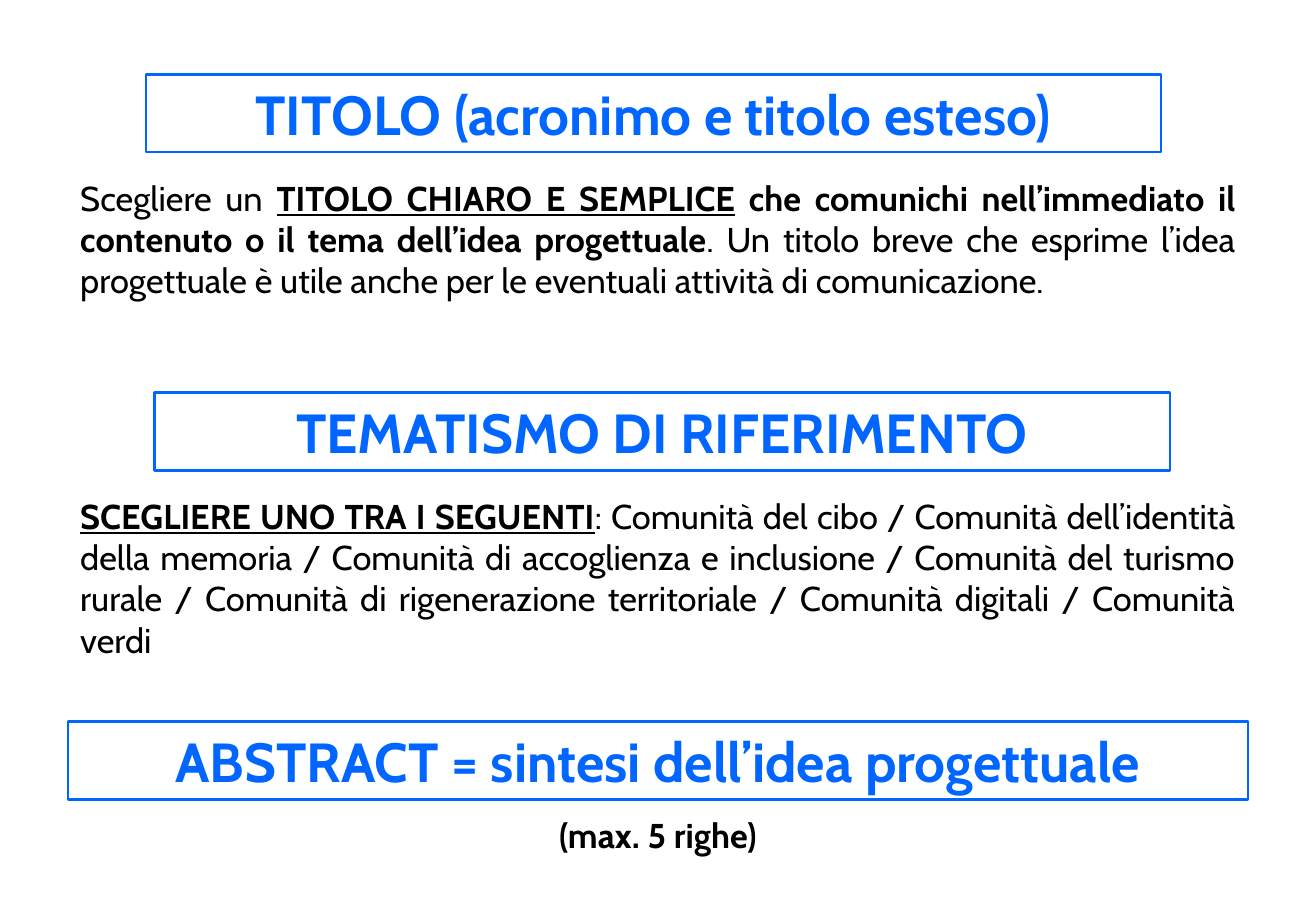
from pptx import Presentation
from pptx.dml.color import RGBColor
from pptx.enum import shapes, text
from pptx.util import Pt

FONT = "Cabin"
BLUE = "0066FF"
BLACK = "000000"
MARGIN = 39.6
CONTENT_WIDTH = 686.16
HEADING_WIDTH = 590.4
HEADING_HEIGHT = 45.36


def color(hex_code):
    return RGBColor.from_string(hex_code)


def add_runs(paragraph, runs, size, hex_code):
    """Append (wording, style) runs; style holds "b" for bold, "u" for underline."""
    for wording, style in runs:
        run = paragraph.add_run()
        run.text = wording
        run.font.name = FONT
        run.font.size = Pt(size)
        run.font.color.rgb = color(hex_code)
        run.font.bold = "b" in style
        run.font.underline = "u" in style


def add_heading(slide, wording, left, top, width):
    heading = slide.shapes.add_shape(
        shapes.MSO_SHAPE.RECTANGLE,
        Pt(left), Pt(top), Pt(width), Pt(HEADING_HEIGHT))
    heading.shadow.inherit = False
    heading.fill.background()
    heading.line.color.rgb = color(BLUE)
    heading.line.width = Pt(1.5)
    frame = heading.text_frame
    frame.vertical_anchor = text.MSO_ANCHOR.MIDDLE
    paragraph = frame.paragraphs[0]
    paragraph.alignment = text.PP_ALIGN.CENTER
    add_runs(paragraph, [(wording, "b")], 32, BLUE)


def add_guidance(slide, runs, top, height, alignment=text.PP_ALIGN.JUSTIFY):
    guidance = slide.shapes.add_textbox(
        Pt(MARGIN), Pt(top), Pt(CONTENT_WIDTH), Pt(height))
    frame = guidance.text_frame
    frame.word_wrap = True
    paragraph = frame.paragraphs[0]
    paragraph.alignment = alignment
    add_runs(paragraph, runs, 20, BLACK)


def main():
    deck = Presentation()
    deck.slide_width = Pt(765.36)
    deck.slide_height = Pt(535.68)
    slide = deck.slides.add_slide(deck.slide_layouts[6])

    add_heading(slide, "TITOLO (acronimo e titolo esteso)",
                84.96, 43.2, HEADING_WIDTH)
    add_guidance(slide, [
        ("Scegliere un ", ""),
        ("TITOLO CHIARO E SEMPLICE", "bu"),
        (" ", ""),
        ("che comunichi nell’immediato il contenuto o il tema "
         "dell’idea progettuale", "b"),
        (". Un titolo breve che esprime l’idea progettuale è utile anche "
         "per le eventuali attività di comunicazione.", ""),
    ], 99.36, 101.52)

    add_heading(slide, "TEMATISMO DI RIFERIMENTO", 90, 228.24, HEADING_WIDTH)
    communities = [
        "del cibo", "dell’identità della memoria",
        "di accoglienza e inclusione", "del turismo rurale",
        "di rigenerazione territoriale", "digitali", "verdi",
    ]
    choices = " / ".join(f"Comunità {community}" for community in communities)
    add_guidance(slide, [
        ("SCEGLIERE UNO TRA I SEGUENTI", "bu"),
        (f": {choices}", ""),
    ], 284.4, 112.32)

    add_heading(slide, "ABSTRACT = sintesi dell’idea progettuale",
                MARGIN, 419.76, CONTENT_WIDTH)
    add_guidance(slide, [("(max. 5 righe)", "b")], 470.16, 33.84,
                 text.PP_ALIGN.CENTER)

    deck.save("out.pptx")


if __name__ == "__main__":
    main()
